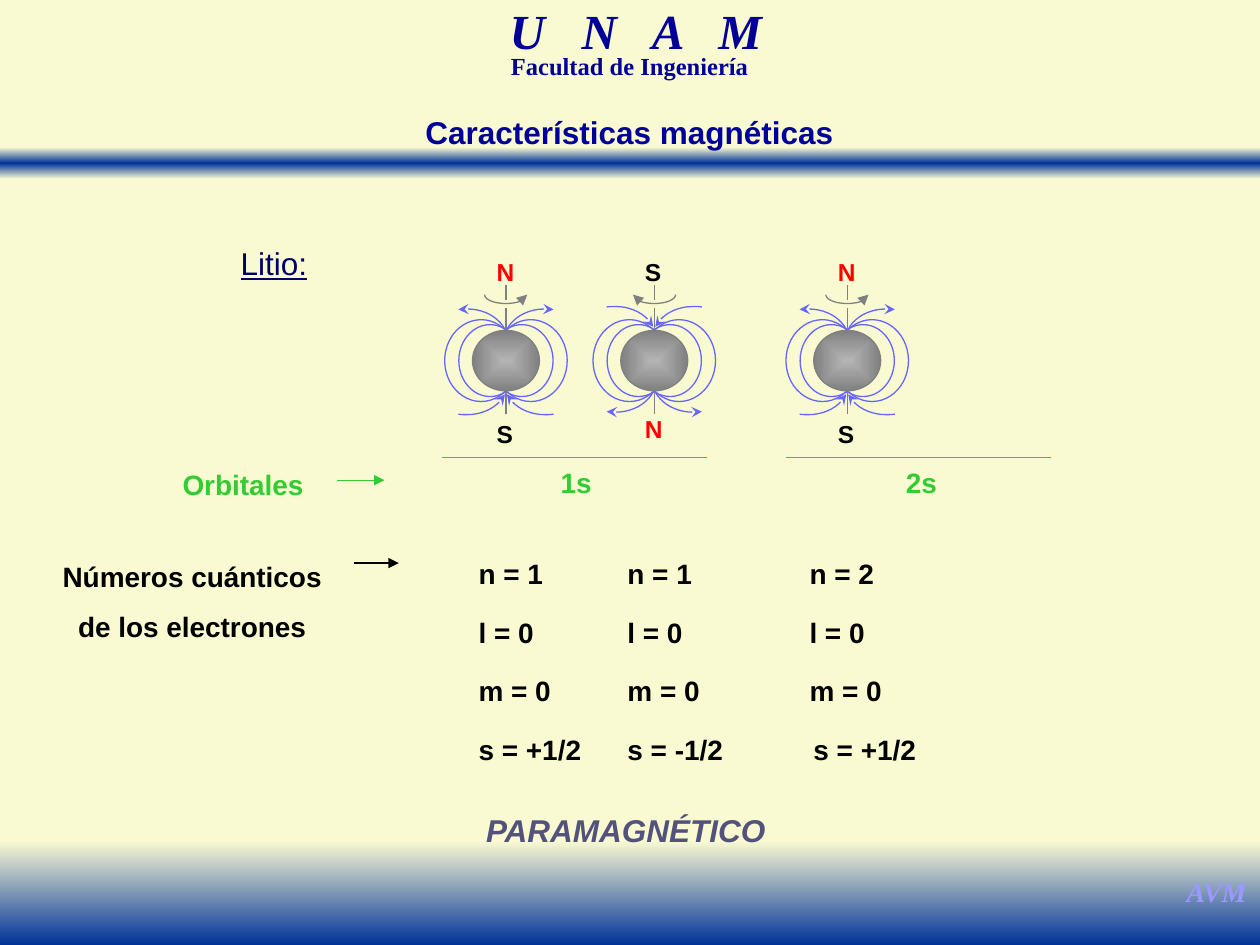
"""Build the slide on the magnetic characteristics of lithium."""
from dataclasses import dataclass

from lxml import etree
from pptx import Presentation
from pptx.dml.color import RGBColor
from pptx.enum.shapes import MSO_CONNECTOR, MSO_SHAPE
from pptx.enum.text import MSO_AUTO_SIZE, PP_ALIGN
from pptx.oxml import parse_xml
from pptx.oxml.ns import nsdecls, qn
from pptx.util import Cm, Pt

STRAIGHT = MSO_CONNECTOR.STRAIGHT
RECTANGLE, OVAL = MSO_SHAPE.RECTANGLE, MSO_SHAPE.OVAL
CENTER, JUSTIFY = PP_ALIGN.CENTER, PP_ALIGN.JUSTIFY
FIT_SHAPE = MSO_AUTO_SIZE.SHAPE_TO_FIT_TEXT
SERIF, SANS = "Times New Roman", "Arial"


@dataclass(frozen=True)
class Theme:
    """Hold the colours and type sizes of the slide."""
    cream: str = "FAFAD2"
    blue: str = "003399"
    navy: str = "000099"
    ink: str = "000066"
    lilac: str = "9999FF"
    slate: str = "52527C"
    green: str = "33CC33"
    black: str = "000000"
    red: str = "FF0000"
    field: str = "6666FF"
    gray: str = "808080"
    silver: str = "B4B4B4"
    banner: Pt = Pt(28)
    heading: Pt = Pt(18)
    body: Pt = Pt(16)
    small: Pt = Pt(14)
    stroke: Pt = Pt(0.75)


THEME = Theme()
BODY = {"name": SANS, "size": THEME.body, "bold": True}
HEADING = BODY | {"size": THEME.heading}
POLE = BODY | {"size": THEME.small}
FACULTY = {"name": SERIF, "size": THEME.small, "bold": True}
BANNER = FACULTY | {"size": THEME.banner, "italic": True}
INITIALS = BANNER | {"size": THEME.body}
SUBJECT = {"name": SANS, "size": THEME.heading, "underline": True}
VERDICT = HEADING | {"italic": True}

SPACED = {"alignment": JUSTIFY, "line_spacing": 1.5}
SPACED_CENTER = {"alignment": CENTER, "line_spacing": 1.5}
TIGHT = {"alignment": CENTER, "line_spacing": 0.7}
PLAIN = {"alignment": JUSTIFY}

ATOM_Y = 7.27
FIELD_BEZIERS = (
    ((0, 0), (0.13, 0.25), (0.43, 0.41), (0.76, 0.41)),
    ((0.76, 0.41), (0.83, 0.41), (0.89, 0.41), (0.94, 0.4)),
)
SPIN_BEZIERS = (
    ((-0.43, 0), (-0.43, 0.1), (-0.24, 0.18), (0, 0.18)),
    ((0, 0.18), (0.24, 0.18), (0.43, 0.1), (0.43, 0)),
)


def apply(target, formats):
    """Set every format value on the target."""
    for attribute, value in formats.items():
        setattr(target, attribute, value)


def add_text(slide, wording, box, font, color, layout=SPACED, wrap=True, tracking=None):
    """Add a one-paragraph text box."""
    frame = slide.shapes.add_textbox(*map(Cm, box)).text_frame
    apply(frame, {"word_wrap": wrap, "auto_size": FIT_SHAPE})
    paragraph = frame.paragraphs[0]
    apply(paragraph, layout)
    run = paragraph.add_run()
    run.text = wording
    apply(run.font, font)
    run.font.color.rgb = RGBColor.from_string(color)
    if tracking:
        run.font.language_id = None
        run._r.get_or_add_rPr().set("spc", str(tracking))


def style_line(figure, color, arrow=None):
    """Colour the outline and put an arrowhead at its end."""
    figure.line.color.rgb = RGBColor.from_string(color)
    figure.line.width = THEME.stroke
    if arrow:
        etree.SubElement(figure.line._get_or_add_ln(), qn("a:tailEnd"), type=arrow)


def fill_gradient(figure, colors, direction):
    """Fill a shape with evenly spaced gradient stops."""
    stops = "".join(
        f'<a:gs pos="{100000 * i // (len(colors) - 1)}"><a:srgbClr val="{color}"/></a:gs>'
        for i, color in enumerate(colors))
    figure.fill.background()
    blank = figure._element.spPr.find(qn("a:noFill"))
    blank.getparent().replace(blank, parse_xml(
        f'<a:gradFill {nsdecls("a")} rotWithShape="1">'
        f"<a:gsLst>{stops}</a:gsLst>{direction}</a:gradFill>"))


def add_band(slide, top, height, colors):
    """Add a full-width band with a vertical gradient."""
    band = slide.shapes.add_shape(RECTANGLE, 0, Cm(top), Cm(25.4), Cm(height))
    band.shadow.inherit = False
    band.line.fill.background()
    fill_gradient(band, colors, '<a:lin ang="5400000" scaled="0"/>')


def add_line(slide, start, end, color, arrow=None):
    """Add a straight line, with an arrowhead if one is named."""
    line = slide.shapes.add_connector(STRAIGHT, *map(Cm, (*start, *end)))
    style_line(line, color, arrow)
    etree.SubElement(line._element.spPr, qn("a:effectLst"))


def add_oval(slide, x, y, width, height, color):
    """Add an unfilled oval around a centre."""
    oval = slide.shapes.add_shape(
        OVAL, *map(Cm, (x - width / 2, y - height / 2, width, height)))
    oval.shadow.inherit = False
    oval.fill.background()
    style_line(oval, color)
    return oval


def trace(beziers, steps=10):
    """Return points along joined cubic curves."""
    points = [beziers[0][0]]
    for curve in beziers:
        for t in (step / steps for step in range(1, steps + 1)):
            weights = ((1 - t) ** 3, 3 * t * (1 - t) ** 2, 3 * t * t * (1 - t), t ** 3)
            points.append(tuple(
                sum(w * p[axis] for w, p in zip(weights, curve)) for axis in (0, 1)))
    return points


def add_curve(slide, points, color, arrow):
    """Add an open curve that ends in an arrowhead."""
    first, *others = [(Cm(x), Cm(y)) for x, y in points]
    builder = slide.shapes.build_freeform(*first)
    builder.add_line_segments(others, close=False)
    curve = builder.convert_to_shape()
    curve.shadow.inherit = False
    curve.fill.background()
    style_line(curve, color, arrow)


def add_electron(slide, x, spin):
    """Draw an electron with its field, spin and poles; spin is 1 or -1."""
    for offset, width, height in ((0.5, 1.47, 1.65), (0.32, 1.26, 1.45)):
        for side in (1, -1):
            add_oval(slide, x + side * offset, ATOM_Y, width, height, THEME.field)
    nucleus = add_oval(slide, x, ATOM_Y, 1.35, 1.22, THEME.gray)
    fill_gradient(nucleus, (THEME.silver, THEME.gray),
                  '<a:path path="rect"><a:fillToRect l="50000" t="50000" r="50000" b="50000"/></a:path>')

    for start, end in ((0.63, 1.08), (-0.62, -1.07), (-1.22, -1.53)):
        add_line(slide, (x, ATOM_Y + start), (x, ATOM_Y + end), THEME.gray)
    add_curve(slide, [(x + spin * dx, ATOM_Y - 1.33 + dy) for dx, dy in trace(SPIN_BEZIERS)],
              THEME.gray, "triangle")

    for side in (1, -1):
        for pole, gap in ((-spin, 0.63), (spin, 0.68)):
            points = [(x + side * (0.02 + dx), ATOM_Y + pole * (gap + dy))
                      for dx, dy in trace(FIELD_BEZIERS)]
            outward = pole == -spin
            add_curve(slide, points if outward else points[::-1], THEME.field, "stealth")

    north, south = ("N", THEME.red), ("S", THEME.black)
    upper, lower = (north, south) if spin > 0 else (south, north)
    lower_top = 8.33 if spin > 0 else 8.23
    for (letter, color), top in ((upper, 5.05), (lower, lower_top)):
        add_text(slide, letter, (x - 0.44, top, 0.89, 0.84), POLE, color, PLAIN)


def add_quantum_numbers(slide, left, numbers, spin_left):
    """List the four quantum numbers of an electron."""
    for row, (symbol, value) in enumerate(zip("nlms", numbers)):
        x = spin_left if symbol == "s" else left
        add_text(slide, f"{symbol} = {value}", (x, 10.76 + 1.18 * row, 2.8, 1.29), BODY, THEME.black)


def main():
    """Build and save the slide."""
    deck = Presentation()
    apply(deck, {"slide_width": Cm(25.4), "slide_height": Cm(19.05)})
    slide = deck.slides.add_slide(deck.slide_layouts[6])
    slide.background.fill.solid()
    slide.background.fill.fore_color.rgb = RGBColor.from_string(THEME.cream)

    add_band(slide, 2.97, 0.64, (THEME.cream, THEME.blue, THEME.cream))
    add_band(slide, 16.95, 2.1, (THEME.cream, THEME.blue))
    add_text(slide, "U N A M", (7.84, 0.2, 9.96, 1.09), BANNER, THEME.navy, TIGHT, tracking=700)
    add_text(slide, "Facultad de Ingeniería", (8.15, 1.07, 9.09, 0.66), FACULTY, THEME.navy, TIGHT)
    add_text(slide, "Características magnéticas", (7.19, 2.36, 11, 0.81), HEADING, THEME.navy, TIGHT)
    add_text(slide, "AVM", (23.65, 17.5, 1.75, 0.94), INITIALS, THEME.lilac, {"alignment": CENTER}, wrap=False)

    add_text(slide, "Litio:", (4.6, 4.42, 2.36, 1.4), SUBJECT, THEME.ink)
    add_text(slide, "Orbitales", (3.43, 8.97, 3.33, 1.29), BODY, THEME.green)
    add_line(slide, (6.79, 9.68), (7.75, 9.68), THEME.green, "triangle")
    for orbital, start, label_left in (("1s", 8.92, 11.05), ("2s", 15.85, 18.01)):
        add_line(slide, (start, 9.22), (start + 5.33, 9.22), THEME.green)
        add_text(slide, orbital, (label_left, 8.93, 1.32, 1.29), BODY, THEME.green)

    add_text(slide, "Números cuánticos de los electrones", (0.84, 10.82, 6.07, 2.31),
             BODY, THEME.black, SPACED_CENTER)
    add_line(slide, (7.13, 11.35), (8.04, 11.35), THEME.black, "triangle")

    for x, spin, left, numbers, spin_left in (
            (10.2, 1, 9.4, (1, 0, 0, "+1/2"), 9.4),
            (13.19, -1, 12.4, (1, 0, 0, "-1/2"), 12.4),
            (17.08, 1, 16.07, (2, 0, 0, "+1/2"), 16.15)):
        add_electron(slide, x, spin)
        add_quantum_numbers(slide, left, numbers, spin_left)

    add_text(slide, "PARAMAGNÉTICO", (9.55, 15.85, 6.27, 1.4), VERDICT, THEME.slate)
    deck.save("out.pptx")


if __name__ == "__main__":
    main()
